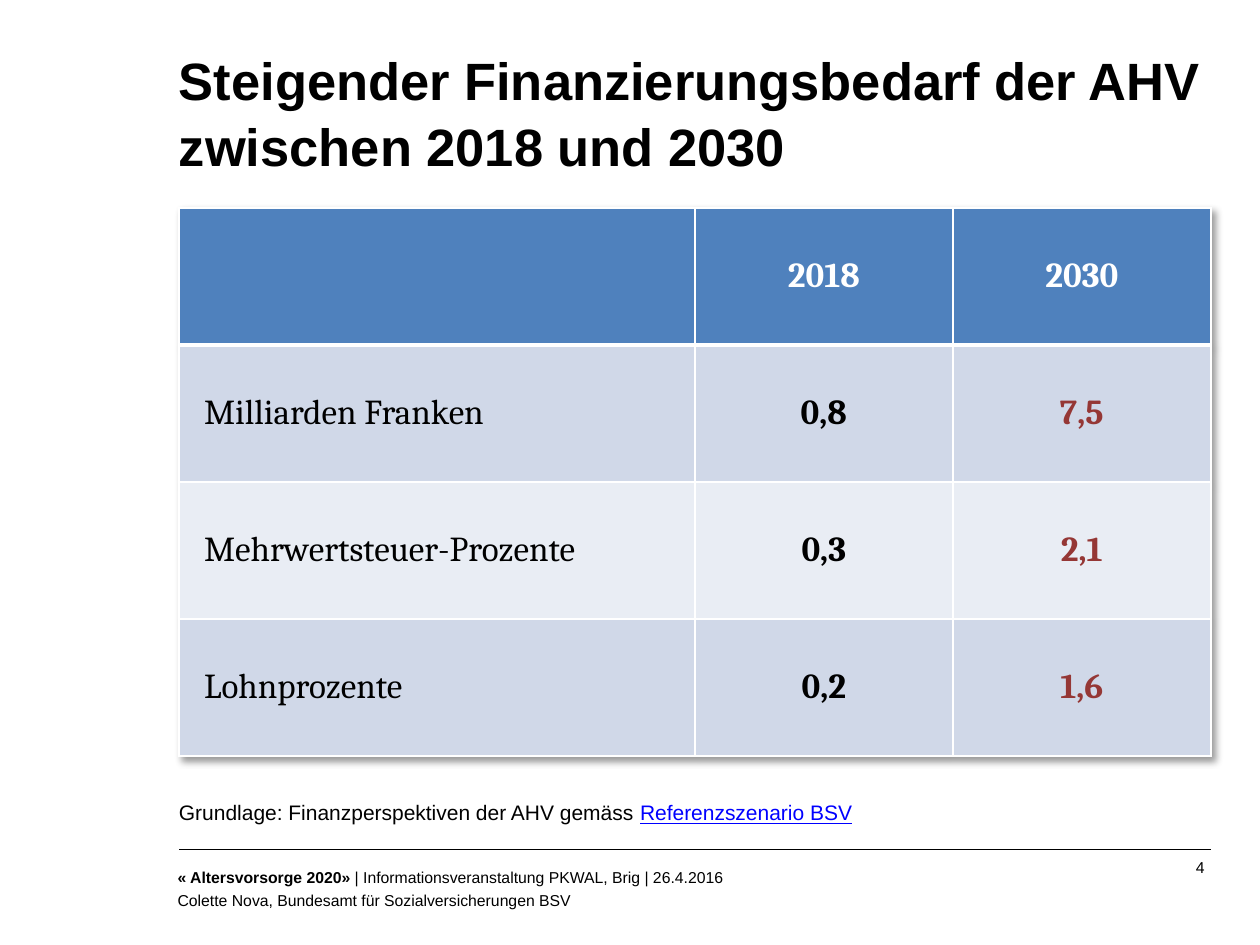
from lxml import etree
from pptx import Presentation, util as u
from pptx.dml.color import RGBColor
from pptx.enum import shapes, text
from pptx.oxml import parse_xml
from pptx.oxml.ns import nsdecls, qn

BLACK = RGBColor(0x00, 0x00, 0x00)
WHITE = RGBColor(0xFF, 0xFF, 0xFF)
HEAD = RGBColor(0x4F, 0x81, 0xBD)
BANDS = [RGBColor(0xE9, 0xED, 0xF4), RGBColor(0xD0, 0xD8, 0xE8)]
RED = RGBColor(0x95, 0x37, 0x35)
BLUE = RGBColor(0x00, 0x00, 0xFF)
COLS, ROWS = 100, 75
LEFT, WIDE = 14.2, 81.9
MID = text.MSO_ANCHOR.MIDDLE
RIGHT = text.PP_ALIGN.RIGHT
CENTER = text.PP_ALIGN.CENTER


class Page:
    sans = "Arial"
    serif = "Cambria"

    def __init__(self, deck):
        self.unit = deck.slide_width / COLS, deck.slide_height / ROWS
        self.slide = deck.slides.add_slide(deck.slide_layouts[6])

    def grid(self, *spans):
        return [round(span * self.unit[i % 2]) for i, span in enumerate(spans)]

    def style(self, font, size, color=BLACK, bold=False, name=sans):
        font.name, font.size, font.bold = name, u.Pt(size), bold
        font.color.rgb = color

    def text(self, spans, lines, size, gap=0, pad=0, align=None, anchor=None, lead=None):
        box = self.slide.shapes.add_textbox(*self.grid(*spans))
        frame = box.text_frame
        frame.word_wrap = True
        frame.margin_left = frame.margin_right = 0
        frame.margin_top = frame.margin_bottom = u.Inches(pad)
        frame.vertical_anchor = anchor
        frame.text = "\n".join("" for line in lines)
        for i, (para, line) in enumerate(zip(frame.paragraphs, lines)):
            para.alignment, para.line_spacing = align, lead
            if gap:
                para.space_after = u.Pt(gap)
                if i:
                    para.space_before = u.Pt(gap)
            for words, color, bold, under in line:
                run = para.add_run()
                run.text = words
                self.style(run.font, size, color, bold)
                run.font.underline = under

    def rule(self, *spans):
        line = self.slide.shapes.add_connector(
            shapes.MSO_CONNECTOR.STRAIGHT, *self.grid(*spans))
        line.line.color.rgb = BLACK
        line.line.width = u.Pt(0.75)
        etree.SubElement(line._element.spPr, qn("a:effectLst"))

    def edge(self, cell, head):
        props = cell._tc.get_or_add_tcPr()
        for i, side in enumerate("LRTB"):
            width = u.Pt(3 if head and side == "B" else 1)
            props.insert(i, parse_xml(
                f'<a:ln{side} {nsdecls("a")} w="{width}"><a:solidFill>'
                f'<a:srgbClr val="{WHITE}"/></a:solidFill></a:ln{side}>'))

    def shade(self, table):
        table._tbl.tblPr.insert(0, parse_xml(
            f'<a:effectLst {nsdecls("a")}><a:outerShdw blurRad="50800" dist="38100" '
            'dir="2700000" algn="tl" rotWithShape="0"><a:srgbClr val="000000">'
            '<a:alpha val="40000"/></a:srgbClr></a:outerShdw></a:effectLst>'))

    def table(self, spans, rows, shares):
        table = self.slide.shapes.add_table(
            len(rows), len(shares), *self.grid(*spans)).table
        self.shade(table)
        for col, share in zip(table.columns, shares):
            col.width = self.grid(spans[2] * share)[0]
        for r, row in enumerate(rows):
            for c, words in enumerate(row):
                cell = table.cell(r, c)
                self.edge(cell, r == 0)
                cell.fill.solid()
                cell.fill.fore_color.rgb = BANDS[r % 2] if r else HEAD
                cell.vertical_anchor = MID
                cell.margin_left = cell.margin_right = u.Inches(0.2)
                if not words:
                    continue
                cell.text_frame.text = words
                para = cell.text_frame.paragraphs[0]
                para.alignment = CENTER if c else None
                color = WHITE if r == 0 else RED if c == 2 else BLACK
                self.style(para.runs[0].font, 20, color, c > 0, self.serif)


def main():
    deck = Presentation()
    deck.slide_width, deck.slide_height = u.Inches(10), u.Inches(7.5)
    page = Page(deck)
    page.text((91.7, 68.1, 3.9, 1.6), [[("4", BLACK, False, False)]], 9, 3, align=RIGHT)
    page.text((14.1, 68.2, 74.6, 4.7), [
        [("« Altersvorsorge 2020» ", BLACK, True, False),
         ("| Informationsveranstaltung PKWAL, Brig | 26.4.2016", BLACK, False, False)],
        [("Colette Nova, Bundesamt für Sozialversicherungen BSV", BLACK, False, False)],
    ], 9, 1, anchor=MID)
    page.rule(LEFT + WIDE, 67.4, LEFT, 67.4)
    page.text((LEFT, 3.3, WIDE, 11), [
        [("Steigender Finanzierungsbedarf der AHV zwischen 2018 und 2030",
          BLACK, True, False)]], 30, anchor=MID, lead=1.05)
    page.table((LEFT, 16.5, WIDE, 43.5), [
        ["", "2018", "2030"],
        ["Milliarden Franken", "0,8", "7,5"],
        ["Mehrwertsteuer-Prozente", "0,3", "2,1"],
        ["Lohnprozente", "0,2", "1,6"],
    ], [0.5, 0.25, 0.25])
    page.text((LEFT, 63, WIDE, 3), [
        [("Grundlage: Finanzperspektiven der AHV gemäss ", BLACK, False, False),
         ("Referenzszenario BSV", BLUE, False, True)]], 12, pad=0.05)
    deck.save("out.pptx")


if __name__ == "__main__":
    main()
